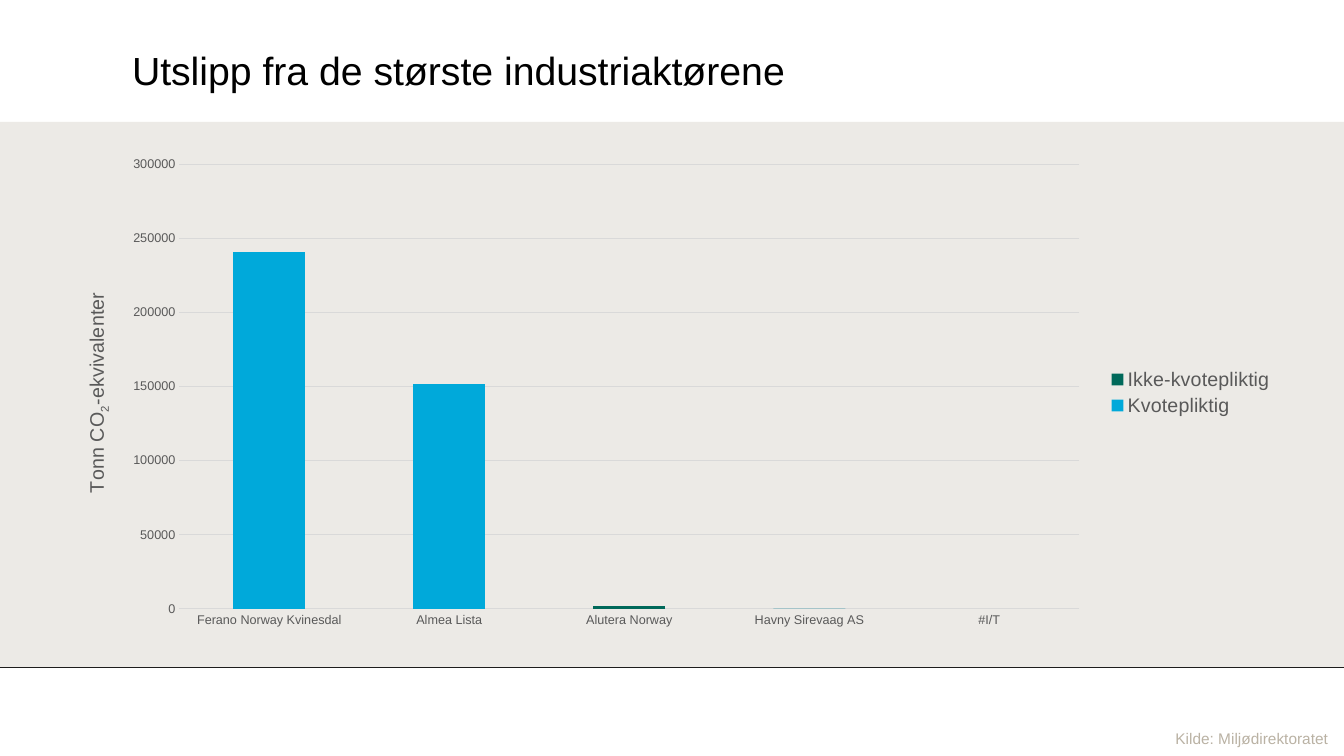
from dataclasses import dataclass

from lxml import etree
from pptx import Presentation
from pptx.chart.data import CategoryChartData
from pptx.dml.color import RGBColor
from pptx.enum.chart import XL_CHART_TYPE, XL_LEGEND_POSITION, XL_TICK_MARK
from pptx.enum.shapes import MSO_CONNECTOR, MSO_SHAPE
from pptx.enum.text import MSO_ANCHOR
from pptx.oxml.ns import qn
from pptx.util import Emu, Pt

STACKED = XL_CHART_TYPE.COLUMN_STACKED
LEGEND_RIGHT = XL_LEGEND_POSITION.RIGHT
NO_TICK = XL_TICK_MARK.NONE
STRAIGHT = MSO_CONNECTOR.STRAIGHT
RECTANGLE = MSO_SHAPE.RECTANGLE
MIDDLE, TOP = MSO_ANCHOR.MIDDLE, MSO_ANCHOR.TOP

BLACK = RGBColor(0x00, 0x00, 0x00)
BAND = RGBColor(0xEC, 0xEA, 0xE6)
SOURCE_GREY = RGBColor(0xBA, 0xB2, 0xA4)
LABEL_GREY = RGBColor(0x59, 0x59, 0x59)
GRID_GREY = RGBColor(0xD9, 0xD9, 0xD9)
BLUE = RGBColor(0x00, 0xA9, 0xDA)
GREEN = RGBColor(0x00, 0x69, 0x5A)

FONT = "Arial"
EMU_PER_PX = 9144
PAGE_WIDTH, PAGE_HEIGHT = 1333, 750
BAND_TOP, BAND_BOTTOM = 121, 662


@dataclass(frozen=True)
class Label:
    text: str
    left: int
    top: int
    width: int
    height: int
    size: int
    color: RGBColor
    anchor: MSO_ANCHOR
    inset_x: int
    inset_y: int


@dataclass(frozen=True)
class Emitter:
    name: str
    values: tuple
    color: RGBColor


LABELS = (
    Label("Utslipp fra de største industriaktørene",
          131, 32, 1110, 75, 28, BLACK, MIDDLE, 0, 0),
    Label("Kilde: Miljødirektoratet",
          1156, 718, 177, 29, 11, SOURCE_GREY, TOP, 10, 5),
)
COMPANIES = ("Ferano Norway Kvinesdal", "Almea Lista", "Alutera Norway",
             "Havny Sirevaag AS", "#I/T")
EMITTERS = (
    Emitter("Kvotepliktig", (241000, 152000, 0, 0, None), BLUE),
    Emitter("Ikke-kvotepliktig", (0, 0, 2000, 0, None), GREEN),
)


def px(length: int) -> Emu:
    return Emu(length * EMU_PER_PX)


def style_font(font, size: int, color: RGBColor) -> None:
    font.name = FONT
    font.size = Pt(size)
    font.bold = False
    font.color.rgb = color


def style_line(line, color: RGBColor) -> None:
    line.color.rgb = color
    line.width = Pt(0.75)


def add_band(page) -> None:
    rule = page.shapes.add_connector(
        STRAIGHT, px(0), px(BAND_BOTTOM), px(PAGE_WIDTH), px(BAND_BOTTOM))
    style_line(rule.line, BLACK)
    properties = rule._element.find(qn("p:spPr"))
    etree.SubElement(properties, qn("a:effectLst"))

    band = page.shapes.add_shape(
        RECTANGLE, px(0), px(BAND_TOP), px(PAGE_WIDTH), px(BAND_BOTTOM - BAND_TOP))
    band.shadow.inherit = False
    band.fill.solid()
    band.fill.fore_color.rgb = BAND
    band.line.fill.background()


def add_label(page, label: Label) -> None:
    box = page.shapes.add_textbox(
        px(label.left), px(label.top), px(label.width), px(label.height))
    frame = box.text_frame
    frame.word_wrap = True
    frame.vertical_anchor = label.anchor
    frame.margin_left = frame.margin_right = px(label.inset_x)
    frame.margin_top = frame.margin_bottom = px(label.inset_y)
    span = frame.paragraphs[0].add_run()
    span.text = label.text
    style_font(span.font, label.size, label.color)


def set_layout(parent, index: int, **settings) -> None:
    """Place a chart part by fractions of the chart area."""
    for old in parent.findall(qn("c:layout")):
        parent.remove(old)
    layout = etree.Element(qn("c:layout"))
    manual = etree.SubElement(layout, qn("c:manualLayout"))
    for name, value in settings.items():
        etree.SubElement(manual, qn(f"c:{name}")).set("val", str(value))
    parent.insert(index, layout)


def add_value_title(axis) -> None:
    title = axis.axis_title
    para = title.text_frame.paragraphs[0]
    style_font(para.font, 14, LABEL_GREY)
    for text, baseline in (("Tonn CO", 0), ("2", -25000), ("-ekvivalenter", 0)):
        span = para.add_run()
        span.text = text
        style_font(span.font, 14, LABEL_GREY)
        if baseline:
            span.font._element.set("baseline", str(baseline))
    element = title._element
    body = next(element.iter(qn("a:bodyPr")))
    body.set("rot", "-5400000")
    body.set("vert", "horz")
    set_layout(element, 1, xMode="edge", yMode="edge", x=0.02, y=0.29)


def add_emission_chart(page) -> None:
    data = CategoryChartData()
    data.categories = COMPANIES
    for emitter in EMITTERS:
        data.add_series(emitter.name, emitter.values)
    chart = page.shapes.add_chart(
        STACKED, px(56), px(146), px(1218), px(487), data).chart
    style_font(chart.font, 10, BLACK)
    chart.has_title = False

    plot = chart.plots[0]
    plot.gap_width = 150
    plot.overlap = 100
    plot.vary_by_categories = False
    for series, emitter in zip(plot.series, EMITTERS):
        series.format.fill.solid()
        series.format.fill.fore_color.rgb = emitter.color
        series.invert_if_negative = False

    for axis in (chart.category_axis, chart.value_axis):
        axis.major_tick_mark = axis.minor_tick_mark = NO_TICK
        style_font(axis.tick_labels.font, 9, LABEL_GREY)
    style_line(chart.category_axis.format.line, GRID_GREY)
    emissions = chart.value_axis
    emissions.minimum_scale = 0
    emissions.maximum_scale = 300000
    emissions.major_unit = 50000
    emissions.format.line.fill.background()
    style_line(emissions.major_gridlines.format.line, GRID_GREY)
    add_value_title(emissions)

    chart.has_legend = True
    chart.legend.position = LEGEND_RIGHT
    chart.legend.include_in_layout = False
    style_font(chart.legend.font, 14, LABEL_GREY)
    plot_area = next(chart._chartSpace.iter(qn("c:plotArea")))
    set_layout(plot_area, 0, layoutTarget="inner", xMode="edge", yMode="edge",
               x=0.1, y=0.035, w=0.733, h=0.906)


def main() -> None:
    deck = Presentation()
    deck.slide_width, deck.slide_height = px(PAGE_WIDTH), px(PAGE_HEIGHT)
    page = deck.slides.add_slide(deck.slide_layouts[6])
    add_band(page)
    for label in LABELS:
        add_label(page, label)
    add_emission_chart(page)
    deck.save("out.pptx")


if __name__ == "__main__":
    main()
